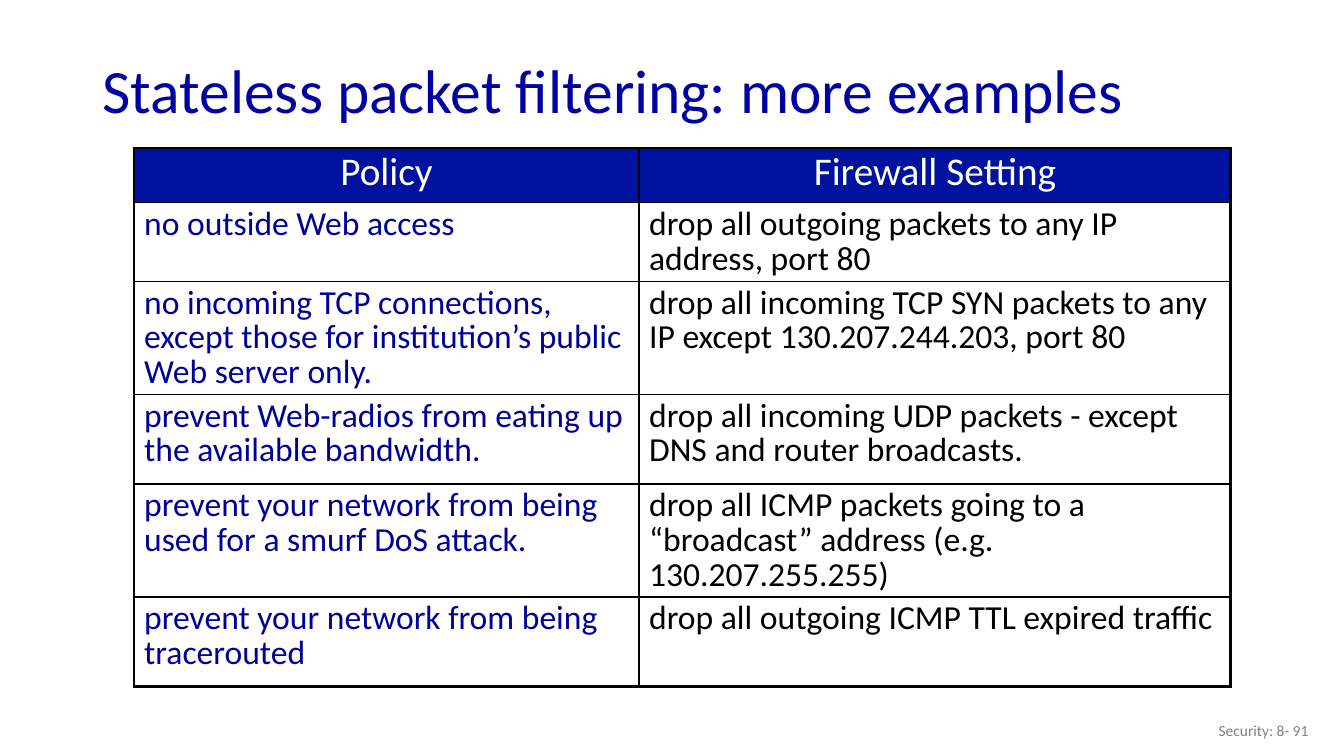
from lxml import etree
from pptx import Presentation
from pptx.dml.color import RGBColor
from pptx.enum.text import MSO_ANCHOR, PP_ALIGN
from pptx.oxml.ns import qn
from pptx.util import Pt

LEFT, CENTER, RIGHT = PP_ALIGN.LEFT, PP_ALIGN.CENTER, PP_ALIGN.RIGHT
MIDDLE = MSO_ANCHOR.MIDDLE

TITLE_BLUE = RGBColor(0x00, 0x00, 0xA3)
HEADER_BLUE = RGBColor(0x00, 0x12, 0xA0)
POLICY_BLUE = RGBColor(0x00, 0x00, 0x99)
BLACK = RGBColor(0x00, 0x00, 0x00)
WHITE = RGBColor(0xFF, 0xFF, 0xFF)
GRAY = RGBColor(0x80, 0x80, 0x80)

THIN, THICK = 1, 2.25

HEADINGS = ("Policy", "Firewall Setting")
RULES = [
    ("no outside Web access",
     "drop all outgoing packets to any IP address, port 80"),
    ("no incoming TCP connections, except those for institution’s public Web server only.",
     "drop all incoming TCP SYN packets to any IP except 130.207.244.203, port 80"),
    ("prevent Web-radios from eating up the available bandwidth.",
     "drop all incoming UDP packets - except DNS and router broadcasts."),
    ("prevent your network from being used for a smurf DoS attack.",
     "drop all ICMP packets going to a “broadcast” address (e.g. 130.207.255.255)"),
    ("prevent your network from being tracerouted",
     "drop all outgoing ICMP TTL expired traffic"),
]
COLUMN_WIDTHS = (360.7, 422.6)
ROW_HEIGHTS = (38.9, 54, 79.2, 64.1, 72, 64.1)


class SlideBuilder:
    """Holds the text style and the slide being built."""

    font_name = "Calibri"

    def __init__(self, slide):
        self.slide = slide

    def fill_text(self, frame, text, size, color, align=LEFT, line_spacing=1.0):
        paragraph = frame.paragraphs[0]
        paragraph.alignment = align
        paragraph.line_spacing = line_spacing
        run = paragraph.add_run()
        run.text = text
        for attribute, value in {"name": self.font_name, "size": Pt(size)}.items():
            setattr(run.font, attribute, value)
        run.font.color.rgb = color

    def text(self, left, top, width, height, text, **style):
        frame = self.slide.shapes.add_textbox(
            Pt(left), Pt(top), Pt(width), Pt(height)).text_frame
        for attribute, value in {"word_wrap": True, "vertical_anchor": MIDDLE}.items():
            setattr(frame, attribute, value)
        self.fill_text(frame, text, **style)

    def borders(self, cell, widths):
        properties = cell._tc.get_or_add_tcPr()
        for side, width in widths.items():
            line = etree.SubElement(properties, qn(f"a:ln{side}"), w=str(Pt(width)))
            fill = etree.SubElement(line, qn("a:solidFill"))
            etree.SubElement(fill, qn("a:srgbClr"), val=str(BLACK))

    def table(self, left, top, widths, heights, rows):
        table = self.slide.shapes.add_table(
            len(heights), len(widths), Pt(left), Pt(top),
            Pt(sum(widths)), Pt(sum(heights))).table
        table.horz_banding = False
        for column, width in zip(table.columns, widths):
            column.width = Pt(width)
        for row, height in zip(table.rows, heights):
            row.height = Pt(height)

        last_row, last_column = len(heights) - 1, len(widths) - 1
        for r, texts in enumerate(rows):
            for c, text in enumerate(texts):
                cell = table.cell(r, c)
                # Thick outer frame, thin inner grid
                self.borders(cell, {
                    "L": THICK if c == 0 else THIN,
                    "R": THICK if c == last_column else THIN,
                    "T": THICK if r == 0 else THIN,
                    "B": THICK if r == last_row else THIN,
                })
                if r == 0:
                    cell.fill.solid()
                    cell.fill.fore_color.rgb = HEADER_BLUE
                    style = {"size": 28, "color": WHITE, "align": CENTER}
                else:
                    cell.fill.background()
                    style = {"size": 24, "color": POLICY_BLUE if c == 0 else BLACK}
                self.fill_text(cell.text_frame, text, line_spacing=0.85, **style)


def main():
    presentation = Presentation()
    presentation.slide_width = Pt(960)
    presentation.slide_height = Pt(540)
    builder = SlideBuilder(
        presentation.slides.add_slide(presentation.slide_layouts[6]))

    # Footer with slide number
    builder.text(725.8, 507.6, 216, 28.8, "Security: 8- 91",
                 size=11, color=GRAY, align=RIGHT)

    # Title
    builder.text(66.2, 31.7, 828, 70.6, "Stateless packet filtering: more examples",
                 size=44, color=TITLE_BLUE, line_spacing=0.9)

    # Policies and the firewall settings that enforce them
    builder.table(95.8, 105.8, COLUMN_WIDTHS, ROW_HEIGHTS, [HEADINGS, *RULES])

    presentation.save("out.pptx")


if __name__ == "__main__":
    main()
